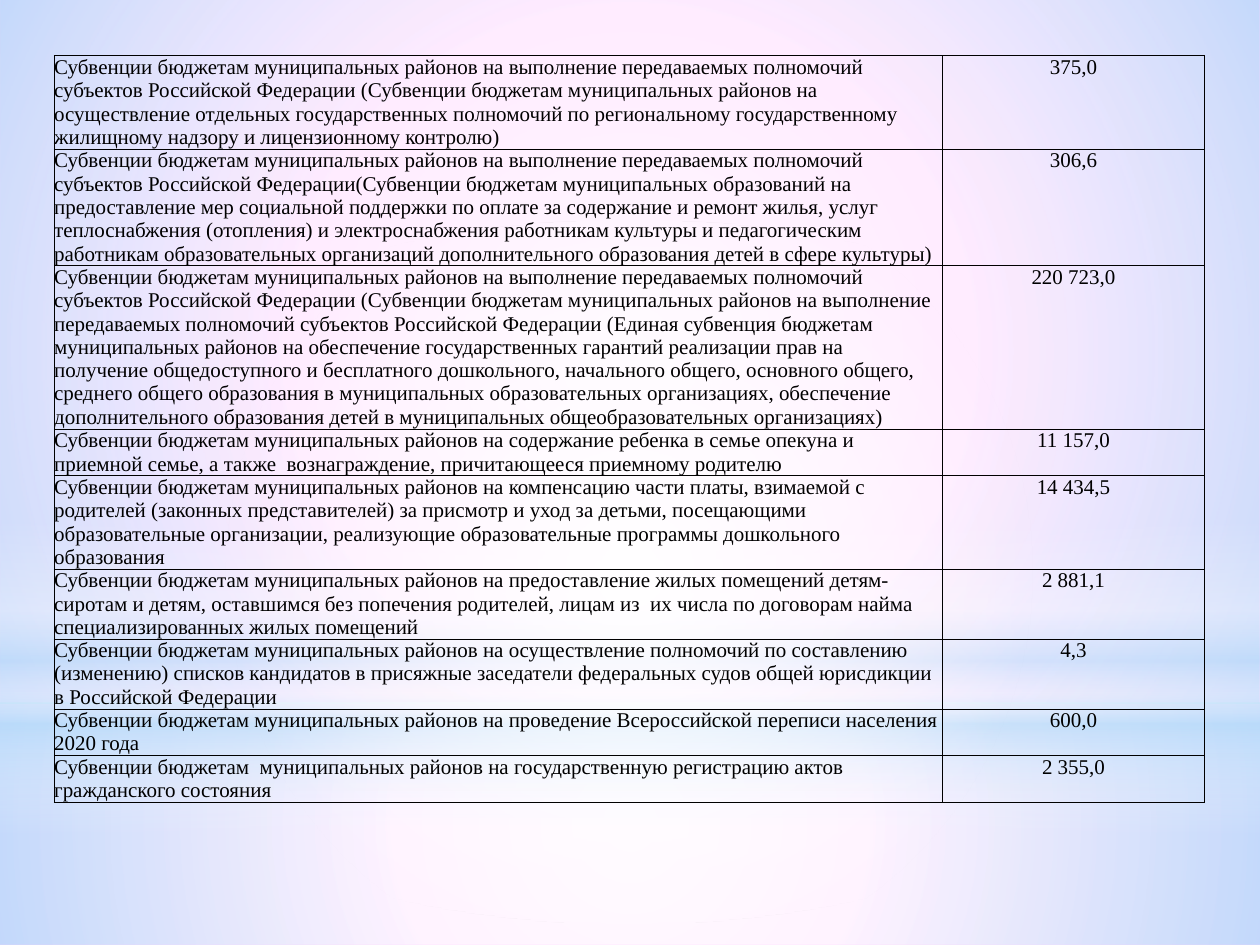
from lxml import etree
from pptx import Presentation, util as u
from pptx.dml.color import RGBColor
from pptx.enum import shapes, text
from pptx.oxml import ns

WIDTH, HEIGHT = u.Inches(10), u.Inches(7.5)
PINK = RGBColor(0xFF, 0xCC, 0xFF)
WHITE = RGBColor(0xFF, 0xFF, 0xFF)
SKY = RGBColor(0xB4, 0xDC, 0xFA)
BLACK = RGBColor(0, 0, 0)
FONT = {"name": "Times New Roman", "size": u.Pt(12)}
CELL = {"margin_left": 0, "margin_right": 0, "margin_top": 0, "margin_bottom": 0}
PLAIN_TABLE = {"first_row": False, "horz_banding": False}

RECT, OVAL = shapes.MSO_SHAPE.RECTANGLE, shapes.MSO_SHAPE.OVAL
LAYERS = [
    (RECT, (0, 74.4, 100, 25.6), [(0, WHITE, 91), (37, WHITE, 76), (100, SKY, 79)], True),
    (RECT, (0, 0, 100, 74.4), [(0, WHITE, 89), (48, WHITE, 62), (100, SKY, 79)], True),
    (RECT, (0, 54.9, 100, 33.3), [(0, WHITE, 0), (29, WHITE, 30), (45, SKY, 40),
                                  (55, WHITE, 26), (65, SKY, 60), (100, WHITE, 0)], False),
    (OVAL, (0, 23.3, 100, 74.4), [(0, WHITE, 100), (56, WHITE, 0)], True),
]

TABLE_BOX = (4.3, 5.9, 91.3, 85.6)
COLUMNS = (70.5, 20.8)
TOP, BOTTOM = text.MSO_ANCHOR.TOP, text.MSO_ANCHOR.BOTTOM
DISTRICTS = "Субвенции бюджетам муниципальных районов на "
POWERS = DISTRICTS + "выполнение передаваемых полномочий субъектов Российской Федерации"
ROWS = [
    (8.3, BOTTOM, POWERS + " (Субвенции бюджетам муниципальных районов на  осуществление отдельных "
     "государственных полномочий по региональному государственному жилищному надзору и "
     "лицензионному контролю)", "375,0"),
    (11.3, TOP, POWERS + "(Субвенции бюджетам муниципальных образований на предоставление мер "
     "социальной поддержки по оплате за содержание и ремонт жилья, услуг теплоснабжения "
     "(отопления) и электроснабжения работникам культуры и педагогическим работникам "
     "образовательных организаций дополнительного образования детей в сфере культуры)", "306,6"),
    (15.3, TOP, POWERS + " (" + POWERS + " (Единая субвенция бюджетам муниципальных районов на "
     "обеспечение государственных гарантий реализации прав на получение общедоступного и "
     "бесплатного дошкольного, начального общего, основного общего, среднего общего образования "
     "в муниципальных образовательных организациях, обеспечение дополнительного образования "
     "детей в муниципальных общеобразовательных организациях)", "220 723,0"),
    (4.8, BOTTOM, DISTRICTS + "содержание ребенка в семье опекуна и приемной семье, а также  "
     "вознаграждение, причитающееся приемному родителю", "11 157,0"),
    (7.2, BOTTOM, DISTRICTS + "компенсацию части платы, взимаемой с родителей (законных "
     "представителей) за присмотр и уход за детьми, посещающими образовательные организации, "
     "реализующие образовательные программы дошкольного образования", "14 434,5"),
    (6, BOTTOM, DISTRICTS + "предоставление жилых помещений детям-сиротам и детям, оставшимся без "
     "попечения родителей, лицам из  их числа по договорам найма специализированных жилых "
     "помещений", "2 881,1"),
    (6, BOTTOM, DISTRICTS + "осуществление полномочий по составлению (изменению) списков "
     "кандидатов в присяжные заседатели федеральных судов общей юрисдикции в Российской "
     "Федерации", "4,3"),
    (2.4, TOP, DISTRICTS + "проведение Всероссийской переписи населения 2020 года", "600,0"),
    (3.6, BOTTOM, "Субвенции бюджетам  муниципальных районов на государственную регистрацию "
     "актов гражданского состояния", "2 355,0"),
]


def across(share):
    return round(WIDTH * share / 100)


def down(share):
    return round(HEIGHT * share / 100)


def place(box):
    left, top, width, height = box
    return across(left), down(top), across(width), down(height)


def apply(obj, values):
    for name, value in values.items():
        setattr(obj, name, value)


def child(parent, tag, **attrs):
    return etree.SubElement(parent, ns.qn(tag), {k: str(v) for k, v in attrs.items()})


def add_layer(s, kind, box, stops, radial):
    sp = s.shapes.add_shape(kind, *place(box))
    sp.shadow.inherit = False
    sp.line.fill.background()
    sp.fill.gradient()
    grad = sp._element.spPr.find(ns.qn("a:gradFill"))
    for old in list(grad):
        grad.remove(old)
    stop_list = child(grad, "a:gsLst")
    for position, color, alpha in stops:
        stop = child(stop_list, "a:gs", pos=position * 1000)
        child(child(stop, "a:srgbClr", val=color), "a:alpha", val=alpha * 1000)
    if radial:
        center = child(grad, "a:path", path="circle")
        child(center, "a:fillToRect", l=50000, t=50000, r=50000, b=50000)
    else:
        child(grad, "a:lin", ang=90 * 60000, scaled=0)


def add_borders(cell):
    props = cell._tc.get_or_add_tcPr()
    for side in ("a:lnL", "a:lnR", "a:lnT", "a:lnB"):
        line = child(props, side, w=u.Pt(0.5))
        child(child(line, "a:solidFill"), "a:srgbClr", val=BLACK)


def fill_cell(cell, words, anchor, align):
    apply(cell, {**CELL, "vertical_anchor": anchor})
    add_borders(cell)
    cell.fill.background()
    p = cell.text_frame.paragraphs[0]
    p.alignment = align
    r = p.add_run()
    r.text = words
    apply(r.font, FONT)
    r.font.color.rgb = BLACK


def add_subsidy_table(s):
    table = s.shapes.add_table(len(ROWS), len(COLUMNS), *place(TABLE_BOX)).table
    apply(table, PLAIN_TABLE)
    for column, share in zip(table.columns, COLUMNS):
        column.width = across(share)
    for row, (share, anchor, purpose, amount) in zip(table.rows, ROWS):
        row.height = down(share)
        fill_cell(row.cells[0], purpose, anchor, text.PP_ALIGN.LEFT)
        fill_cell(row.cells[1], amount, TOP, text.PP_ALIGN.CENTER)


def main():
    prs = Presentation()
    apply(prs, {"slide_width": WIDTH, "slide_height": HEIGHT})
    s = prs.slides.add_slide(prs.slide_layouts[6])
    s.background.fill.solid()
    s.background.fill.fore_color.rgb = PINK
    for layer in LAYERS:
        add_layer(s, *layer)
    add_subsidy_table(s)
    prs.save("out.pptx")


if __name__ == "__main__":
    main()
